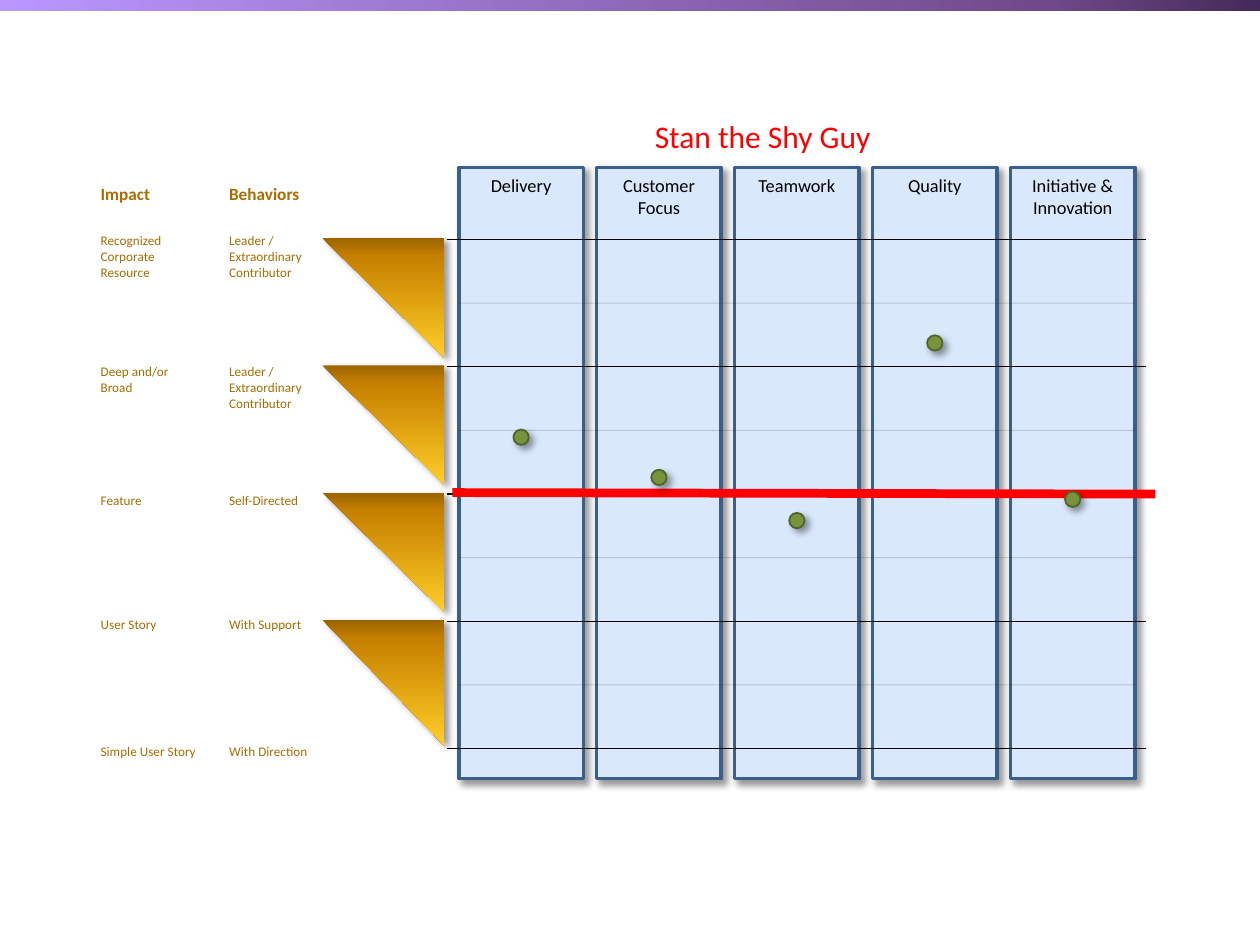
import pptx
import pptx.util
import pptx.oxml
import pptx.oxml.ns
import pptx.dml.color
import pptx.enum.shapes
import pptx.enum.text

Cm, Pt = pptx.util.Cm, pptx.util.Pt
qn = pptx.oxml.ns.qn
KIND = pptx.enum.shapes.MSO_SHAPE
TEXT = pptx.enum.text

HUE = {
    "pane": "DAE8FC", "edge": "3A5F8C", "ink": "000000", "gold": "A86C00",
    "red": "FF0000", "dot": "77933C", "rim": "4F6228",
}
BAR = [(0, "442A58"), (17, "714989"), (100, "BA97FF")]
WEDGE = [(0, "9A6400"), (15, "C68000"), (100, "FFCD28")]

TITLE = "Stan the Shy Guy"
# skill, top of its rating dot (cm)
SKILLS = [
    ("Delivery", 8.66), ("Customer Focus", 9.47), ("Teamwork", 10.34),
    ("Quality", 6.76), ("Initiative & Innovation", 9.91),
]
# heading, left, then (lines, width) from the heading down (cm)
SCALES = [
    (4.37, [(["Behaviors"], 2.18),
            (["Leader /", "Extraordinary", "Contributor"], 2.16),
            (["Leader /", "Extraordinary", "Contributor"], 2.16),
            (["Self-Directed"], 2.06),
            (["With Support"], 2.06),
            (["With Direction"], 2.16)]),
    (1.78, [(["Impact"], 1.63),
            (["Recognized", "Corporate", "Resource"], 1.98),
            (["Deep and/or", "Broad"], 2.06),
            (["Feature"], 1.42),
            (["User Story"], 1.78),
            (["Simple User Story"], 2.67)]),
]
ROWS = [3.58, 4.57, 7.21, 9.8, 12.3, 14.86]

LEFT, TOP, WIDE, TALL, STEP = 9.25, 3.38, 2.51, 12.32, 2.78
RIGHT = LEFT + (len(SKILLS) - 1) * STEP + WIDE
LEVEL, RISE, LEVELS = 4.83, 2.565, 5
DOT = 0.31


def rgb(name):
    return pptx.dml.color.RGBColor.from_string(HUE[name])


def add_shape(kind, x, y, w, h, fill=None, line=None, width=1, shade=True):
    shape = slide.shapes.add_shape(kind, Cm(x), Cm(y), Cm(w), Cm(h))
    shape.shadow.inherit = False
    if fill:
        shape.fill.solid()
        shape.fill.fore_color.rgb = rgb(fill)
    if line:
        shape.line.color.rgb = rgb(line)
        shape.line.width = Pt(width)
    else:
        shape.line.fill.background()
    if shade:
        glow = shape._element.spPr.find(qn("a:effectLst"))
        glow.append(pptx.oxml.parse_xml(
            f'<a:outerShdw {pptx.oxml.ns.nsdecls("a")} blurRad="{Pt(4)}" '
            f'dist="{Pt(3)}" dir="2700000" algn="tl" rotWithShape="0">'
            '<a:srgbClr val="000000"><a:alpha val="40000"/></a:srgbClr>'
            '</a:outerShdw>'))
    return shape


def blend(shape, stops, angle):
    """Fill a shape with a linear gradient."""
    marks = "".join(f'<a:gs pos="{at * 1000}"><a:srgbClr val="{hue}"/></a:gs>'
                    for at, hue in stops)
    shape.fill.background()
    props = shape._element.spPr
    props.replace(props.find(qn("a:noFill")), pptx.oxml.parse_xml(
        f'<a:gradFill {pptx.oxml.ns.nsdecls("a")} rotWithShape="1">'
        f'<a:gsLst>{marks}</a:gsLst>'
        f'<a:lin ang="{angle * 60000}" scaled="0"/></a:gradFill>'))


def add_line(x1, y1, x2, y2, hue, width, alpha=None):
    line = slide.shapes.add_connector(
        pptx.enum.shapes.MSO_CONNECTOR.STRAIGHT, Cm(x1), Cm(y1), Cm(x2), Cm(y2))
    line.line.color.rgb = rgb(hue)
    line.line.width = Pt(width)
    props = line._element.spPr
    if alpha:
        tint = next(props.iter(qn("a:srgbClr")))
        tint.append(tint.makeelement(qn("a:alpha"), {"val": str(alpha * 1000)}))
    props.append(props.makeelement(qn("a:effectLst"), {}))


def write(frame, lines, size, hue, bold=False):
    frame.text = "\n".join(lines)
    for para in frame.paragraphs:
        font = para.font
        font.name, font.size, font.bold = "Calibri", Pt(size), bold
        font.color.rgb = rgb(hue)


def add_text(x, y, w, h, lines, size, hue, bold=False, wrap=False):
    frame = slide.shapes.add_textbox(Cm(x), Cm(y), Cm(w), Cm(h)).text_frame
    frame.word_wrap = wrap
    frame.auto_size = TEXT.MSO_AUTO_SIZE.SHAPE_TO_FIT_TEXT
    write(frame, lines, size, hue, bold)


deck = pptx.Presentation()
deck.slide_width, deck.slide_height = Cm(25.4), Cm(19.05)
slide = deck.slides.add_slide(deck.slide_layouts[6])

blend(add_shape(KIND.RECTANGLE, -0.05, -0.05, 25.45, 0.28, shade=False), BAR, 180)

for i, (skill, _) in enumerate(SKILLS):
    pane = add_shape(KIND.RECTANGLE, LEFT + i * STEP, TOP, WIDE, TALL,
                     "pane", "edge", 2)
    frame = pane.text_frame
    frame.vertical_anchor = TEXT.MSO_ANCHOR.TOP
    write(frame, [skill], 10.5, "ink")
    frame.paragraphs[0].alignment = TEXT.PP_ALIGN.CENTER

for i in range(LEVELS):
    y = LEVEL + i * RISE
    add_line(9.02, y, 23.11, y, "ink", 0.75)
for i in range(LEVELS - 1):
    y = LEVEL + (i + 0.5) * RISE
    add_line(LEFT, y, RIGHT, y, "ink", 0.5, 15)

for i in range(LEVELS - 1):
    tall = 2.54 if i == LEVELS - 2 else 2.41
    wedge = add_shape(KIND.RIGHT_TRIANGLE, 6.5, LEVEL - 0.03 + i * RISE, 2.46, tall)
    wedge.rotation = 180
    blend(wedge, WEDGE, 270)

for x, cells in SCALES:
    for i, (y, (lines, wide)) in enumerate(zip(ROWS, cells)):
        head = i == 0
        tall = 0.69 if head else 0.58 + 0.32 * (len(lines) - 1)
        add_text(x, y, wide, tall, lines, 9.8 if head else 7.5, "gold", head)

add_text(12.95, 2.24, 8.03, 1.02, [TITLE], 18, "red", wrap=True)
add_line(23.29, 9.96, 9.12, 9.93, "red", 5)

for i, (_, y) in enumerate(SKILLS):
    add_shape(KIND.OVAL, LEFT + i * STEP + (WIDE - DOT) / 2, y, DOT, DOT,
              "dot", "rim")

deck.save("out.pptx")
